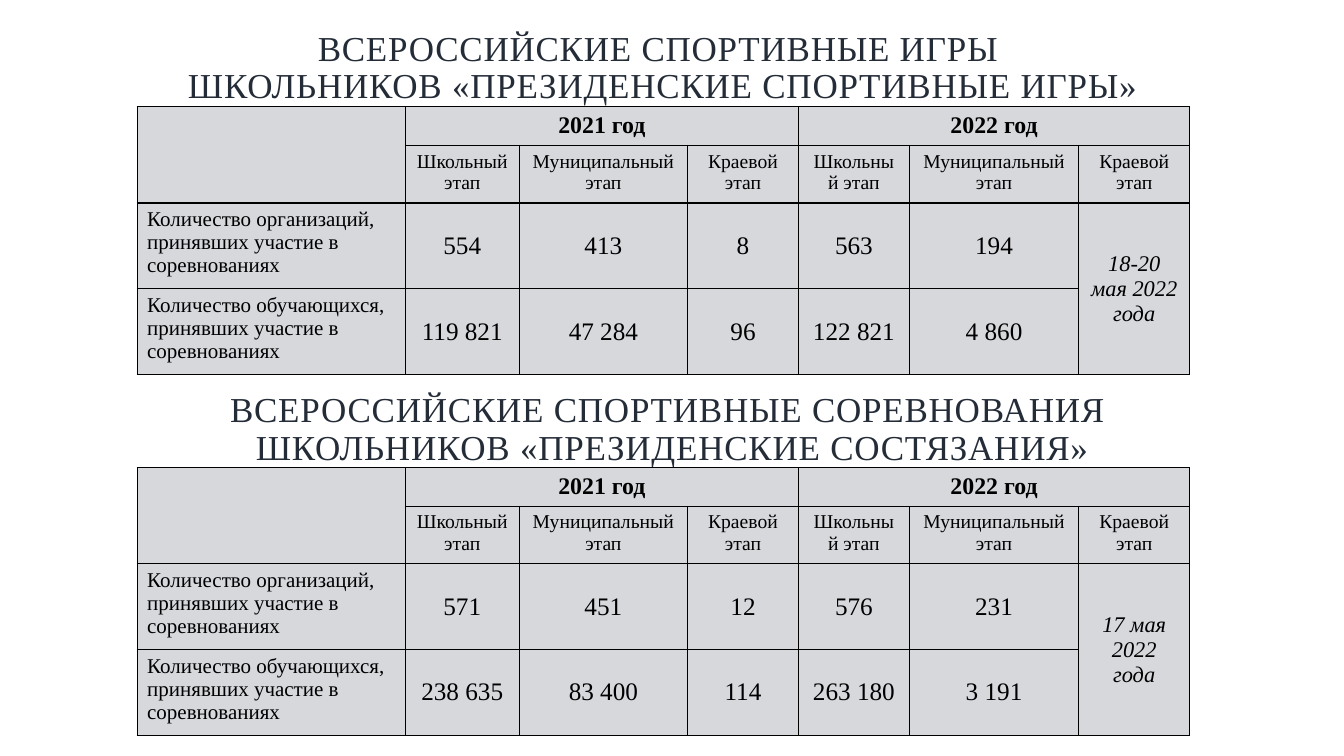
from dataclasses import dataclass

from lxml.etree import SubElement
from pptx import Presentation
from pptx.dml.color import RGBColor
from pptx.enum.text import MSO_ANCHOR, MSO_AUTO_SIZE, PP_ALIGN
from pptx.oxml import parse_xml
from pptx.oxml.ns import nsdecls, qn
from pptx.shapes.base import BaseShape
from pptx.slide import Slide
from pptx.table import _Cell
from pptx.util import Inches, Pt

FONT = "Times New Roman"
COLUMNS = (2.66, 1.13, 1.67, 1.1, 1.1, 1.68, 1.1)
ROWS = (0.38, 0.57, 0.85, 0.85)
TABLE_LEFT = 1.36
STAGES = ("Школьный этап", "Муниципальный этап", "Краевой этап")
LABELS = (
    "Количество организаций, принявших участие в соревнованиях",
    "Количество обучающихся, принявших участие в соревнованиях",
)


@dataclass(frozen=True)
class Heading:
    left: float
    top: float
    width: float
    lines: tuple[str, str]


@dataclass(frozen=True)
class Competition:
    heading: Heading
    table_top: float
    organizations: tuple[str, ...]
    students: tuple[str, ...]
    regional_date: str


@dataclass(frozen=True)
class TextStyle:
    size: float
    bold: bool = False
    italic: bool = False
    align: PP_ALIGN = PP_ALIGN.CENTER
    anchor: MSO_ANCHOR = MSO_ANCHOR.TOP


YEAR = TextStyle(17, bold=True)
STAGE = TextStyle(14)
LABEL = TextStyle(15, align=PP_ALIGN.LEFT)
VALUE = TextStyle(18, anchor=MSO_ANCHOR.MIDDLE)
DATE = TextStyle(16, italic=True, anchor=MSO_ANCHOR.MIDDLE)

COMPETITIONS = (
    Competition(
        Heading(0.79, 0.25, 11.57, (
            "ВСЕРОССИЙСКИЕ СПОРТИВНЫЕ ИГРЫ ",
            "ШКОЛЬНИКОВ «ПРЕЗИДЕНСКИЕ СПОРТИВНЫЕ ИГРЫ»",
        )),
        1.06,
        ("554", "413", "8", "563", "194"),
        ("119 821", "47 284", "96", "122 821", "4 860"),
        "18-20 мая 2022 года",
    ),
    Competition(
        Heading(0.77, 3.84, 11.8, (
            "ВСЕРОССИЙСКИЕ СПОРТИВНЫЕ СОРЕВНОВАНИЯ ",
            "ШКОЛЬНИКОВ «ПРЕЗИДЕНСКИЕ СОСТЯЗАНИЯ»",
        )),
        4.64,
        ("571", "451", "12", "576", "231"),
        ("238 635", "83 400", "114", "263 180", "3 191"),
        "17 мая 2022 года",
    ),
)


def rgb(value: str) -> RGBColor:
    return RGBColor.from_string(value)


def line_xml(tag: str, color: str):
    return parse_xml(
        f'<a:{tag} {nsdecls("a")} w="12700"><a:solidFill>'
        f'<a:srgbClr val="{color}"/></a:solidFill></a:{tag}>'
    )


def write_heading(sp: BaseShape, heading: Heading) -> None:
    sp.left, sp.top = Inches(heading.left), Inches(heading.top)
    sp.width, sp.height = Inches(heading.width), Inches(0.86)
    tf = sp.text_frame
    tf.word_wrap = True
    tf.auto_size = MSO_AUTO_SIZE.SHAPE_TO_FIT_TEXT
    tf.vertical_anchor = MSO_ANCHOR.TOP
    for i, line in enumerate(heading.lines):
        p = tf.add_paragraph() if i else tf.paragraphs[0]
        p.alignment = PP_ALIGN.CENTER
        p.line_spacing = Pt(27)
        r = p.add_run()
        r.text = line
        r.font.name = FONT
        r.font.size = Pt(25)
        r.font.color.rgb = rgb("242C38")
        properties = r.font._element
        properties.set("spc", "60")
        properties.insert(0, line_xml("ln", "3B3838"))


def format_cell(cell: _Cell) -> None:
    cell.fill.solid()
    cell.fill.fore_color.rgb = rgb("333F50")
    properties = cell._tc.get_or_add_tcPr()
    color = properties.find(f"{qn('a:solidFill')}/{qn('a:srgbClr')}")
    SubElement(color, qn("a:alpha")).set("val", "20000")
    for i, side in enumerate(("lnL", "lnR", "lnT", "lnB")):
        properties.insert(i, line_xml(side, "000000"))


def write_cell(cell: _Cell, text: str, style: TextStyle) -> None:
    cell.vertical_anchor = style.anchor
    p = cell.text_frame.paragraphs[0]
    p.alignment = style.align
    r = p.add_run()
    r.text = text
    r.font.name = FONT
    r.font.size = Pt(style.size)
    r.font.bold = style.bold
    r.font.italic = style.italic
    r.font.color.rgb = rgb("000000")


def add_results(s: Slide, competition: Competition) -> None:
    table = s.shapes.add_table(
        len(ROWS), len(COLUMNS), Inches(TABLE_LEFT), Inches(competition.table_top),
        Inches(sum(COLUMNS)), Inches(sum(ROWS)),
    ).table
    table.first_row = table.horz_banding = False
    for column, width in zip(table.columns, COLUMNS):
        column.width = Inches(width)
    for row, height in zip(table.rows, ROWS):
        row.height = Inches(height)
    for cell in table.iter_cells():
        format_cell(cell)

    table.cell(0, 0).merge(table.cell(1, 0))
    for first, year in ((1, "2021 год"), (4, "2022 год")):
        table.cell(0, first).merge(table.cell(0, first + 2))
        write_cell(table.cell(0, first), year, YEAR)
        for i, stage in enumerate(STAGES):
            write_cell(table.cell(1, first + i), stage, STAGE)

    results = (competition.organizations, competition.students)
    for row, (label, values) in enumerate(zip(LABELS, results), start=2):
        write_cell(table.cell(row, 0), label, LABEL)
        for column, value in enumerate(values, start=1):
            write_cell(table.cell(row, column), value, VALUE)
    table.cell(2, 6).merge(table.cell(3, 6))
    write_cell(table.cell(2, 6), competition.regional_date, DATE)


def main() -> None:
    prs = Presentation()
    prs.slide_width, prs.slide_height = Inches(13.33), Inches(7.5)
    s = prs.slides.add_slide(prs.slide_layouts[5])
    subtitle = s.shapes.add_textbox(0, 0, 0, 0)
    for sp, competition in zip((s.shapes.title, subtitle), COMPETITIONS):
        write_heading(sp, competition.heading)
        add_results(s, competition)
    prs.save("out.pptx")


if __name__ == "__main__":
    main()
